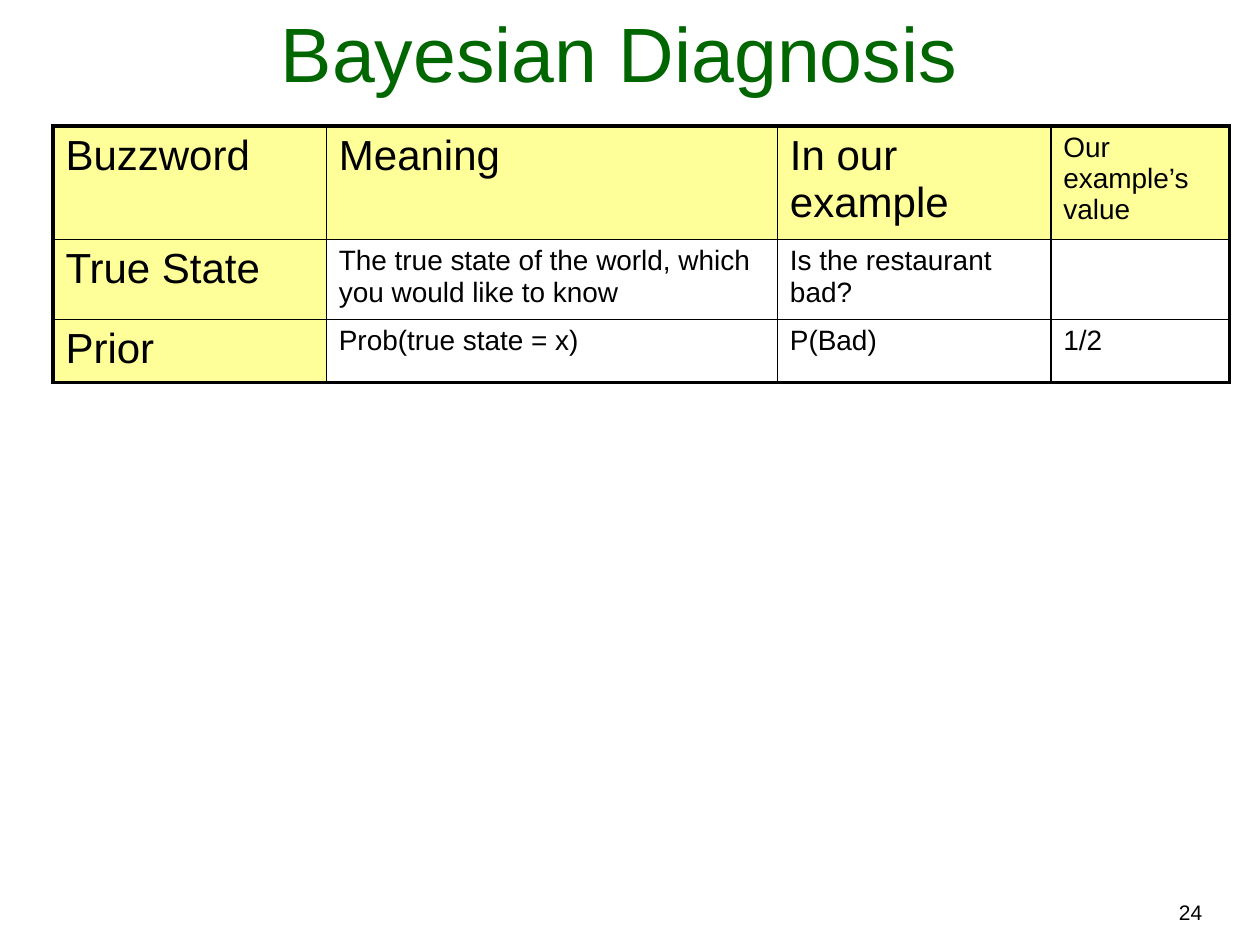
from lxml import etree
from pptx import Presentation, util as u
from pptx.dml import color
from pptx.enum import text
from pptx.oxml import ns

HUES = {"ink": "000000", "title": "006600", "head": "FFFF99"}
ROWS = [
    ["Buzzword", "Meaning", "In our example", "Our example’s value"],
    ["True State", "The true state of the world, which you would like to know",
     "Is the restaurant bad?", ""],
    ["Prior", "Prob(true state = x)", "P(Bad)", "1/2"],
]
WIDTHS = [2.17, 3.58, 2.17, 1.42]
HEIGHTS = [0.9, 0.63, 0.5]
THIN, THICK = 1, 2.25


def place(shape, box):
    """Move a shape to a box of left, top, width and height in inches."""
    for name, size in zip(("left", "top", "width", "height"), box):
        setattr(shape, name, u.Inches(size))


def write(frame, words, size, hue="ink", align=text.PP_ALIGN.LEFT):
    """Put one formatted line of words in a text frame."""
    para = frame.paragraphs[0]
    para.alignment = align
    run = para.add_run()
    run.text = words
    for name, value in {"name": "Arial", "size": u.Pt(size)}.items():
        setattr(run.font, name, value)
    run.font.color.rgb = color.RGBColor.from_string(HUES[hue])


def edge(cell, sides):
    """Draw the borders of a cell from a dict of side to width in points."""
    props = cell._tc.get_or_add_tcPr()
    for side, width in sides.items():
        line = etree.SubElement(props, ns.qn("a:ln" + side), w=str(u.Pt(width)))
        fill = etree.SubElement(line, ns.qn("a:solidFill"))
        etree.SubElement(fill, ns.qn("a:srgbClr"), val=HUES["ink"])


def add_title(slide, box):
    """Fill the title placeholder."""
    title = slide.shapes.title
    place(title, box)
    form = {"vertical_anchor": text.MSO_ANCHOR.BOTTOM,
            "auto_size": text.MSO_AUTO_SIZE.NONE, "word_wrap": True}
    for name, value in form.items():
        setattr(title.text_frame, name, value)
    write(title.text_frame, "Bayesian Diagnosis", 44, "title", text.PP_ALIGN.CENTER)


def add_terms(slide, box):
    """Build the table of terms with a heavy outer frame."""
    last_row, last_col = len(ROWS) - 1, len(WIDTHS) - 1
    table = slide.shapes.add_table(len(ROWS), len(WIDTHS), *map(u.Inches, box)).table
    for name in ("first_row", "horz_banding"):
        setattr(table, name, False)
    for col, width in zip(table.columns, WIDTHS):
        col.width = u.Inches(width)
    for row, height in zip(table.rows, HEIGHTS):
        row.height = u.Inches(height)
    for i, line in enumerate(ROWS):
        for j, words in enumerate(line):
            cell = table.cell(i, j)
            outer = {"L": j == 0, "R": j == last_col, "T": i == 0, "B": i == last_row}
            edge(cell, {side: THICK if out else THIN for side, out in outer.items()})
            if i == 0 or j == 0:
                cell.fill.solid()
                cell.fill.fore_color.rgb = color.RGBColor.from_string(HUES["head"])
            else:
                cell.fill.background()
            if words:
                large = j == 0 or (i == 0 and j < last_col)
                write(cell.text_frame, words, 24 if large else 16)


def add_page(slide, box):
    """Add the page number at the lower right."""
    frame = slide.shapes.add_textbox(*map(u.Inches, box)).text_frame
    frame.word_wrap = True
    write(frame, "24", 12, align=text.PP_ALIGN.RIGHT)


def main():
    """Build and save the slide."""
    deck = Presentation()
    deck.slide_width, deck.slide_height = u.Inches(10), u.Inches(7.5)
    slide = deck.slides.add_slide(deck.slide_layouts[5])
    add_page(slide, (5.72, 7.09, 3.92, 0.3))
    add_title(slide, (0.25, 0.08, 9.33, 0.75))
    add_terms(slide, (0.42, 1, sum(WIDTHS), sum(HEIGHTS)))
    deck.save("out.pptx")


if __name__ == "__main__":
    main()
